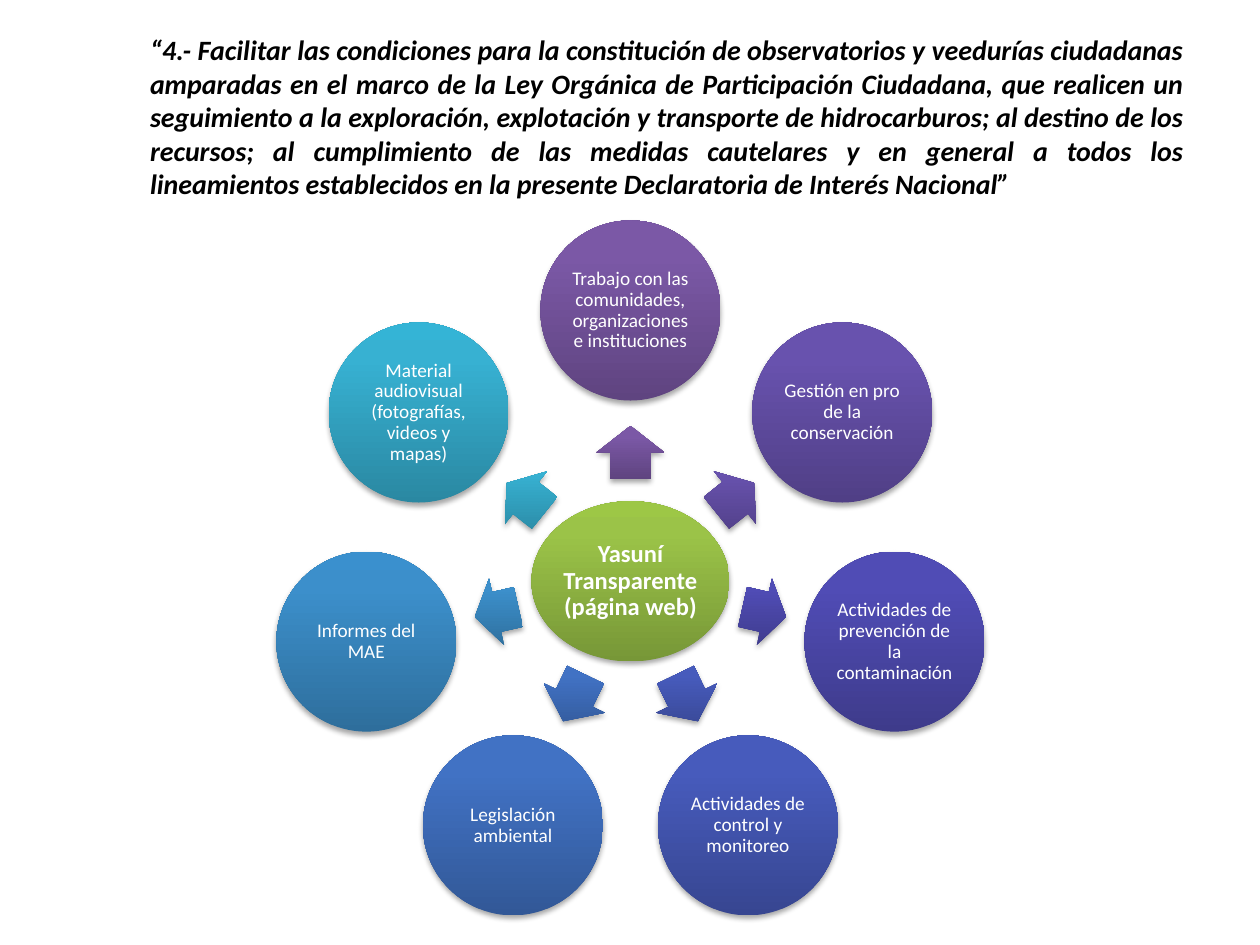
from copy import deepcopy
from dataclasses import dataclass
from math import cos, radians, sin

from lxml.etree import SubElement
from pptx import Presentation
from pptx.dml.color import RGBColor
from pptx.enum.shapes import MSO_SHAPE
from pptx.enum.text import MSO_ANCHOR, MSO_AUTO_SIZE, PP_ALIGN
from pptx.oxml.ns import qn
from pptx.shapes.autoshape import Shape
from pptx.slide import Slide
from pptx.util import Cm, Pt

FONT = "Calibri"
BLACK = RGBColor(0x00, 0x00, 0x00)
WHITE = RGBColor(0xFF, 0xFF, 0xFF)

CENTER_X, CENTER_Y = 12.71, 11.72
RING_RADIUS = 5.46
TOPIC_SIZE = 3.63
HUB_WIDTH, HUB_HEIGHT = 3.99, 3.23
ARROW_WIDTH = 1.37

TITLE = (
    "“4.- Facilitar las condiciones para la constitución de observatorios y "
    "veedurías ciudadanas amparadas en el marco de la Ley Orgánica de "
    "Participación Ciudadana, que realicen un seguimiento a la exploración, "
    "explotación y transporte de hidrocarburos; al destino de los recursos; al "
    "cumplimiento de las medidas cautelares y en general a todos los "
    "lineamientos establecidos en la presente Declaratoria de Interés Nacional”"
)


@dataclass(frozen=True)
class Shades:
    dark: RGBColor
    middle: RGBColor
    light: RGBColor


@dataclass(frozen=True)
class Topic:
    label: str
    shades: Shades
    arrow_length: float
    arrow_distance: float


def shades(dark: str, middle: str, light: str) -> Shades:
    return Shades(*(RGBColor.from_string(color) for color in (dark, middle, light)))


HUB_SHADES = shades("779737", "9BC348", "9DC746")
TOPICS = [
    Topic("Trabajo con las comunidades, organizaciones e instituciones",
          shades("5F4480", "7B58A6", "7C57A8"), 1.07, 2.6),
    Topic("Gestión en pro de la conservación",
          shades("503F86", "6852AE", "6851B0"), 0.97, 2.7),
    Topic("Actividades de prevención de la contaminación",
          shades("3E3B8B", "504CB5", "4F4BB8"), 0.9, 2.77),
    Topic("Actividades de control y monitoreo",
          shades("374691", "475BBC", "455ABF"), 1.04, 2.61),
    Topic("Legislación ambiental",
          shades("325897", "4172C4", "3F72C7"), 1.04, 2.61),
    Topic("Informes del MAE",
          shades("2E6E9C", "3C8FCB", "3A90CE"), 0.9, 2.77),
    Topic("Material audiovisual (fotografías, videos y mapas)",
          shades("2A88A2", "37B1D2", "34B4D6"), 0.97, 2.7),
]


def fill_gradient(shape: Shape, colors: Shades) -> None:
    shape.fill.gradient()
    shape.fill.gradient_angle = 90
    gradient = shape._element.spPr.find(qn("a:gradFill"))
    gradient.set("rotWithShape", "0")
    stop_list = gradient.find(qn("a:gsLst"))
    stop_list.insert(1, deepcopy(stop_list[0]))
    values = ((0, colors.dark), (0.8, colors.middle), (1, colors.light))
    for stop, (position, color) in zip(shape.fill.gradient_stops, values):
        stop.position = position
        stop.color.rgb = color


def add_shadow(shape: Shape) -> None:
    shape.shadow.inherit = False
    effects = shape._element.spPr.find(qn("a:effectLst"))
    shadow = SubElement(effects, qn("a:outerShdw"), blurRad=str(Pt(3.1)),
                        dist=str(Pt(1.8)), dir="5400000", rotWithShape="0")
    color = SubElement(shadow, qn("a:srgbClr"), val=str(BLACK))
    SubElement(color, qn("a:alpha"), val="35000")


def add_centered(slide: Slide, kind: MSO_SHAPE, x: float, y: float,
                 width: float, height: float, colors: Shades) -> Shape:
    shape = slide.shapes.add_shape(kind, Cm(x - width / 2), Cm(y - height / 2),
                                   Cm(width), Cm(height))
    shape.line.fill.background()
    fill_gradient(shape, colors)
    add_shadow(shape)
    return shape


def add_circle(slide: Slide, label: str, x: float, y: float, width: float,
               height: float, colors: Shades, size: int, bold: bool) -> None:
    circle = add_centered(slide, MSO_SHAPE.OVAL, x, y, width, height, colors)
    frame = circle.text_frame
    frame.word_wrap = True
    frame.vertical_anchor = MSO_ANCHOR.MIDDLE
    frame.margin_left = frame.margin_right = Cm(0.05)
    frame.margin_top = frame.margin_bottom = Cm(0.05)
    para = frame.paragraphs[0]
    para.alignment = PP_ALIGN.CENTER
    para.line_spacing = 0.9
    para.space_after = Pt(size * 0.35)
    span = para.add_run()
    span.text = label
    span.font.name = FONT
    span.font.size = Pt(size)
    span.font.bold = bold
    span.font.color.rgb = WHITE


def add_topic(slide: Slide, topic: Topic, angle: float) -> None:
    across, down = cos(radians(angle)), sin(radians(angle))
    arrow = add_centered(slide, MSO_SHAPE.RIGHT_ARROW,
                         CENTER_X + topic.arrow_distance * across,
                         CENTER_Y + topic.arrow_distance * down,
                         topic.arrow_length, ARROW_WIDTH, topic.shades)
    arrow.adjustments[0] = 0.6
    arrow.adjustments[1] = 0.5
    arrow.rotation = angle % 360
    add_circle(slide, topic.label, CENTER_X + RING_RADIUS * across,
               CENTER_Y + RING_RADIUS * down, TOPIC_SIZE, TOPIC_SIZE,
               topic.shades, 11, False)


def write_title(slide: Slide) -> None:
    title = slide.shapes.title
    title.left, title.top = Cm(2.77), Cm(0.76)
    title.width, title.height = Cm(21.36), Cm(3.18)
    frame = title.text_frame
    frame.word_wrap = True
    frame.auto_size = MSO_AUTO_SIZE.NONE
    frame.vertical_anchor = MSO_ANCHOR.MIDDLE
    para = frame.paragraphs[0]
    para.alignment = PP_ALIGN.JUSTIFY
    span = para.add_run()
    span.text = TITLE
    span.font.name = FONT
    span.font.size = Pt(16)
    span.font.bold = True
    span.font.italic = True
    span.font.color.rgb = BLACK


def main() -> None:
    deck = Presentation()
    deck.slide_width, deck.slide_height = Cm(25.4), Cm(19.05)
    page = deck.slides.add_slide(deck.slide_layouts[5])
    write_title(page)
    add_circle(page, "Yasuní Transparente (página web)", CENTER_X, CENTER_Y,
               HUB_WIDTH, HUB_HEIGHT, HUB_SHADES, 14, True)
    for index, topic in enumerate(TOPICS):
        add_topic(page, topic, index * 360 / len(TOPICS) - 90)
    deck.save("out.pptx")


if __name__ == "__main__":
    main()
